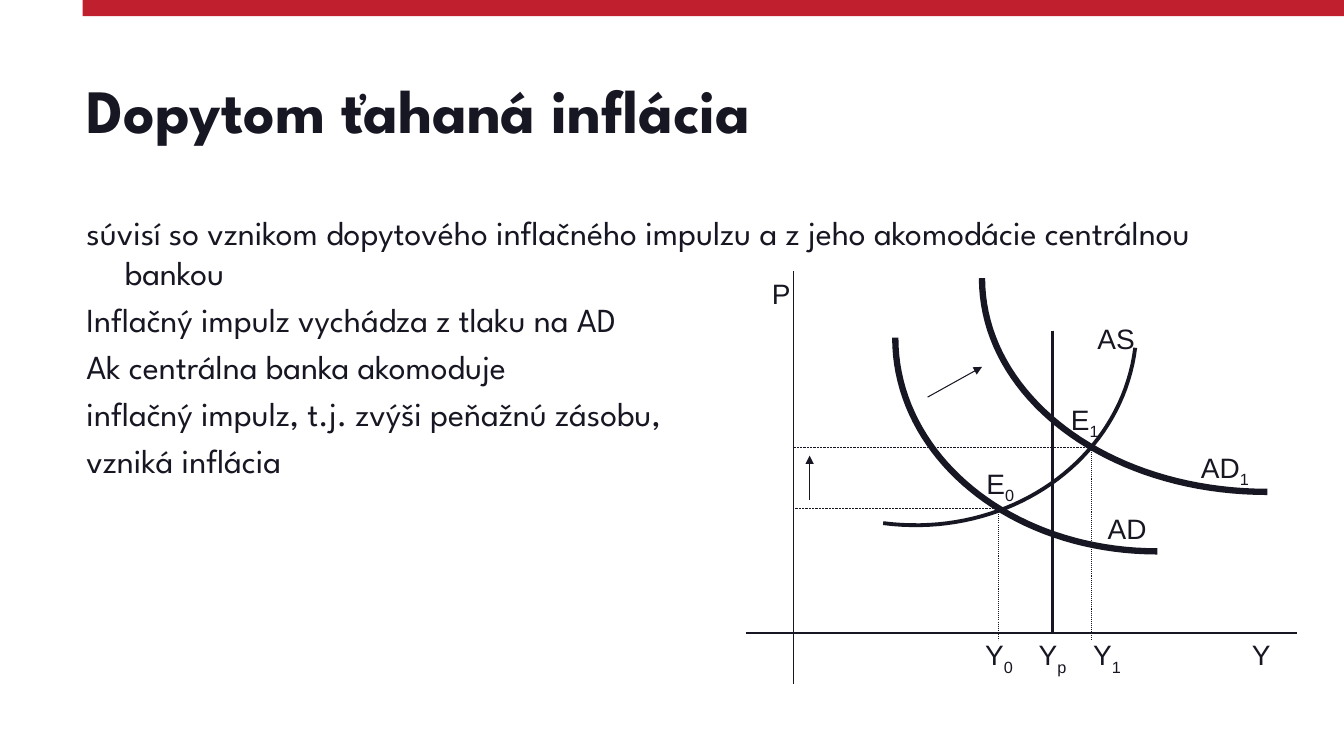
from pptx import Presentation
from pptx.dml.color import RGBColor
from pptx.enum.dml import MSO_LINE
from pptx.enum.shapes import MSO_CONNECTOR, MSO_SHAPE
from pptx.enum.text import MSO_ANCHOR, PP_ALIGN
from pptx.oxml.ns import qn
from pptx.util import Emu, Inches, Pt
from lxml.etree import SubElement

COLORS = {"ink": RGBColor.from_string("171723"), "bar": RGBColor.from_string("C0202E")}

prs = Presentation()
prs.slide_width, prs.slide_height = Inches(13.33), Inches(7.5)
s = prs.slides.add_slide(prs.slide_layouts[6])
cell = prs.slide_height / 75  # square grid: 75 rows, 133.3 columns


def add_text(box, lines, font, size, bold=False):
    """Text box on the grid; an underscore sets the rest of a line as subscript."""
    tf = s.shapes.add_textbox(*[Emu(int(v * cell)) for v in box]).text_frame
    tf.word_wrap = True
    for i, line in enumerate(lines):
        p = tf.paragraphs[0] if i == 0 else tf.add_paragraph()
        base, _, sub = line.partition("_")
        p.add_run().text = base
        if sub:
            r = p.add_run()
            r.text = sub
            r.font._element.set("baseline", "-25000")
        p.font.name, p.font.size, p.font.bold = font, Pt(size), bold
        p.font.color.rgb = COLORS["ink"]
    return tf


def add_line(ends, width, dotted=False, arrow=False):
    """Straight line between two grid points."""
    sp = s.shapes.add_connector(MSO_CONNECTOR.STRAIGHT, *[Emu(int(v * cell)) for v in ends])
    sp.line.width = Pt(width)
    sp.line.color.rgb = COLORS["ink"]
    if dotted:
        sp.line.dash_style = MSO_LINE.ROUND_DOT
    if arrow:
        SubElement(sp.line._get_or_add_ln(), qn("a:tailEnd"), type="triangle")
    SubElement(sp._element.spPr, qn("a:effectLst"))


# Top bar
bar_left = int(8.2 * cell)
bar = s.shapes.add_shape(MSO_SHAPE.RECTANGLE, bar_left, 0, prs.slide_width - bar_left, int(1.6 * cell))
bar.shadow.inherit = False
bar.fill.solid()
bar.fill.fore_color.rgb = COLORS["bar"]
bar.line.fill.background()

# Title
tf = add_text((7.6, 4, 115, 14.5), ["Dopytom ťahaná inflácia"], "League Spartan", 44, True)
tf.vertical_anchor = MSO_ANCHOR.MIDDLE
tf.paragraphs[0].line_spacing = 0.9

# Body with hanging indents
tf = add_text((7.6, 20.5, 119.6, 49.1), [
    "súvisí so vznikom dopytového inflačného impulzu a z jeho akomodácie centrálnou bankou",
    "Inflačný impulz vychádza z tlaku na AD",
    "Ak centrálna banka akomoduje",
    "inflačný impulz, t.j. zvýši peňažnú zásobu,",
    "vzniká inflácia",
], "League Spartan", 24)
for i, p in enumerate(tf.paragraphs):
    pPr = p._element.get_or_add_pPr()
    pPr.set("marL", str(Inches(0.38)))
    pPr.set("indent", str(-Inches(0.38)))
    if i:
        p.space_before = Pt(4.8)

# Axes and potential output
axis_x, axis_y, potential = 78.7, 62.8, 104.4
add_line((axis_x, 26.9, axis_x, 67.9), 0.75)
add_line((74, axis_y, 128.6, axis_y), 0.75)
add_line((potential, 32.8, potential, axis_y), 2)

# Curves: cubic Bézier points, then the line width
curves = [
    ([(88.8, 33.5), (88.8, 45.2), (100.2, 54.7), (114.8, 54.7)], 4.5),  # AD
    ([(112.6, 34.5), (111.2, 45.7), (100, 53.5), (87.6, 51.9)], 2.75),  # AS
    ([(97.4, 27.6), (97.4, 39.3), (109.8, 48.8), (125.7, 48.8)], 4.5),  # AD1
]
steps = 40
for controls, width in curves:
    points = []
    for t in [i / steps for i in range(steps + 1)]:
        weights = ((1 - t) ** 3, 3 * t * (1 - t) ** 2, 3 * t * t * (1 - t), t ** 3)
        points.append(tuple(int(cell * sum(w * c[k] for w, c in zip(weights, controls))) for k in (0, 1)))
    builder = s.shapes.build_freeform(*points[0])
    builder.add_line_segments(points[1:], close=False)
    sp = builder.convert_to_shape()
    sp.shadow.inherit = False
    sp.fill.background()
    sp.line.width = Pt(width)
    sp.line.color.rgb = COLORS["ink"]

# Dotted guides from each equilibrium to both axes
for x, y in [(99, 50.4), (108.3, 44.4)]:
    add_line((x, y, x, 63.5), 0.75, dotted=True)
    add_line((x, y, axis_x, y), 0.5, dotted=True)

# Shift arrows
add_line((80.3, 49.6, 80.3, 45.2), 0.75, arrow=True)
add_line((92, 39.4, 97.4, 36.4), 0.75, arrow=True)

# Labels: text, centre column, top row
labels = [
    ("P", 77.5, 26.9), ("Y", 125.1, 62.8), ("AS", 110.7, 31.4),
    ("Y_0", 99.1, 62.8), ("Y_p", 104.4, 62.8), ("Y_1", 109.8, 62.8),
    ("E_0", 99.2, 45.8), ("E_1", 107.6, 39.4),
    ("AD", 111.8, 50.2), ("AD_1", 121.5, 44.2),
]
label_w, label_h = 9, 4.1
for text, x, y in labels:
    tf = add_text((x - label_w / 2, y, label_w, label_h), [text], "Arial", 20)
    tf.paragraphs[0].alignment = PP_ALIGN.CENTER

prs.save("out.pptx")
